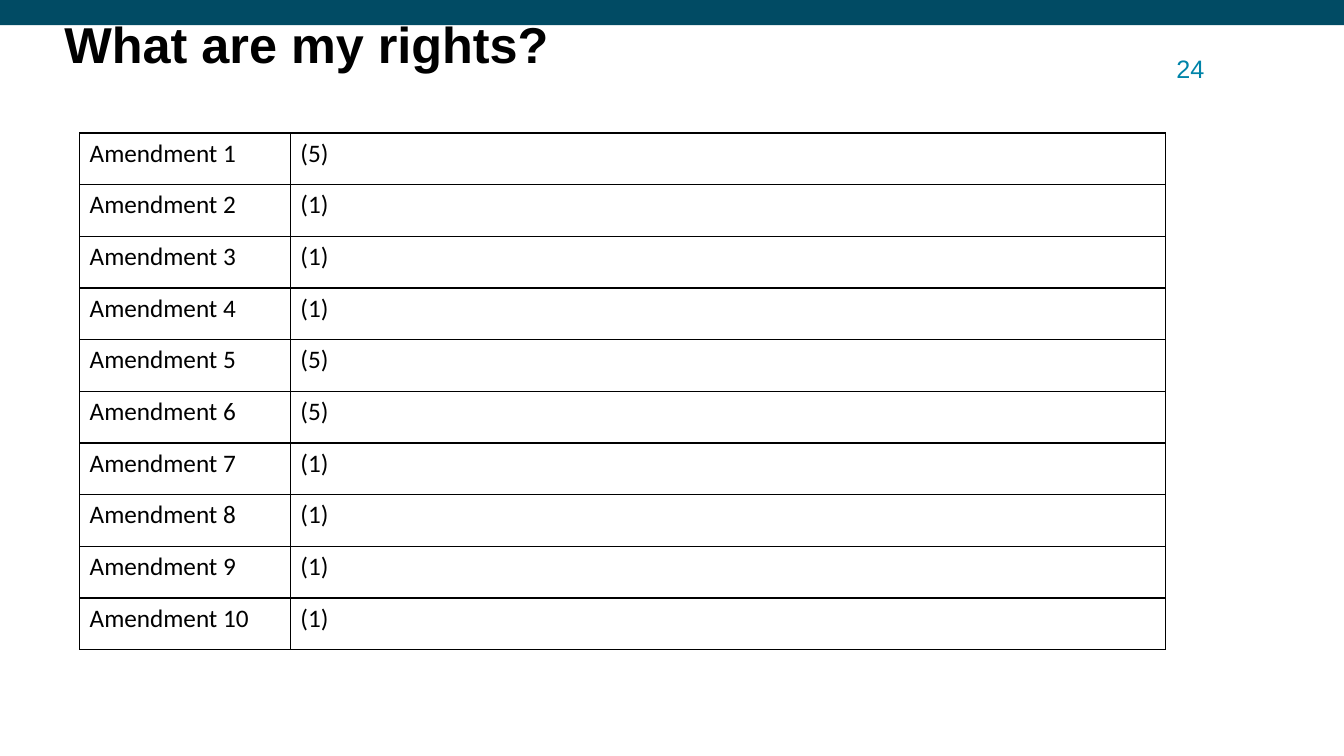
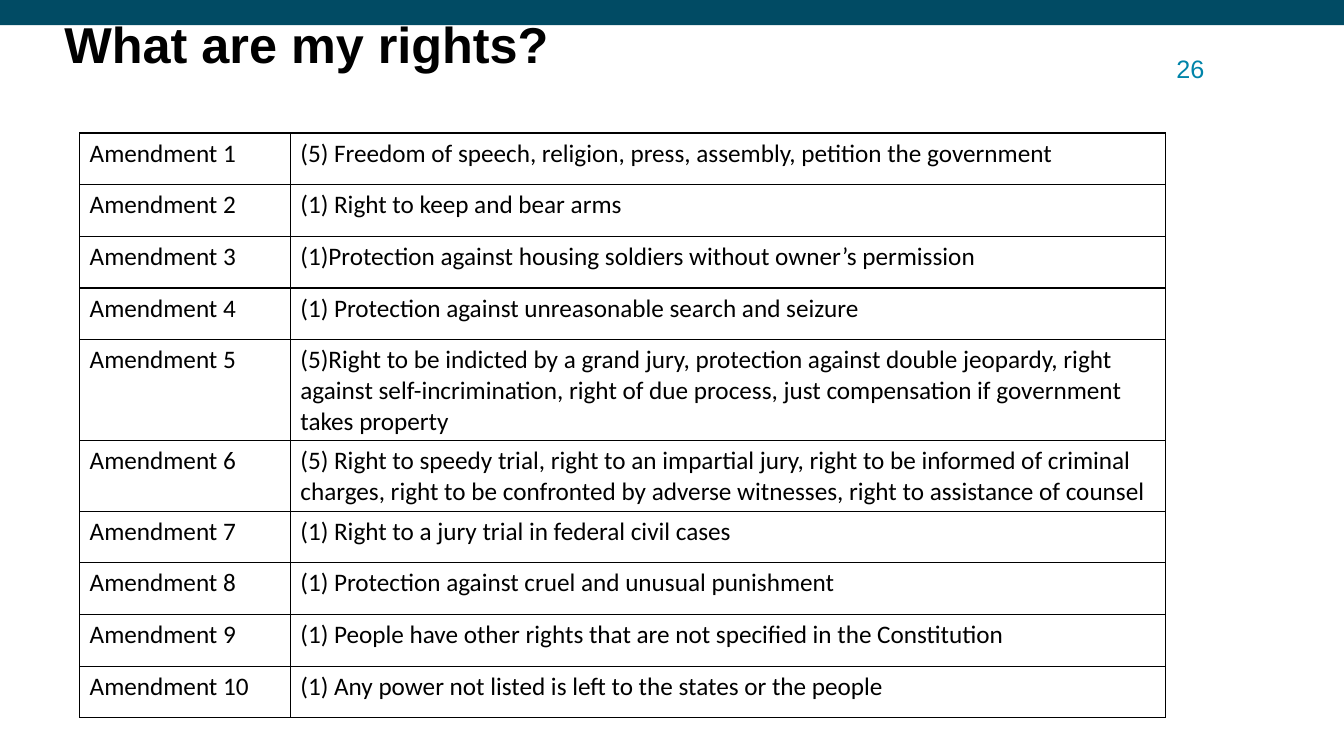
from dataclasses import dataclass

from lxml.etree import SubElement
from pptx import Presentation
from pptx.dml.color import RGBColor as Rgb
from pptx.enum.shapes import MSO_SHAPE as Shape
from pptx.enum.text import MSO_ANCHOR as Anchor, PP_ALIGN as Align
from pptx.oxml.ns import qn
from pptx.presentation import Presentation as Deck
from pptx.slide import Slide
from pptx.table import _Cell as Cell
from pptx.text.text import _Paragraph as Para
from pptx.util import Pt


@dataclass(frozen=True)
class Font:
    name: str
    size: int
    color: str
    bold: bool = False


@dataclass(frozen=True)
class Theme:
    band: str = "014B64"
    rule: str = "000000"
    line: int = 1
    title: Font = Font("Arial", 36, "000000", True)
    number: Font = Font("Arial", 18, "0084A9")
    body: Font = Font("Calibri", 18, "000000")


@dataclass(frozen=True)
class Box:
    left: float
    top: float
    width: float
    height: float

    def place(self) -> tuple[Pt, Pt, Pt, Pt]:
        return Pt(self.left), Pt(self.top), Pt(self.width), Pt(self.height)


@dataclass(frozen=True)
class Page:
    number: int
    rights: list[str]


THEME = Theme()
WIDTH, HEIGHT = 960, 540
BAND = Box(0, 0, WIDTH, 18)
TITLE = Box(46, 14.4, 741, 64.8)
NUMBER = Box(832.3, 34.6, 36, 25.2)
COLS = (150.5, 625)
ROW = 36.93
RIGHTS = [
    "(5) Freedom of speech, religion, press, assembly, petition the government",
    "(1) Right to keep and bear arms",
    "(1)Protection against housing soldiers without owner’s permission",
    "(1) Protection against unreasonable search and seizure",
    "(5)Right to be indicted by a grand jury, protection against double jeopardy, "
    "right against self-incrimination, right of due process, just compensation "
    "if government takes property",
    "(5) Right to speedy trial, right to an impartial jury, right to be informed "
    "of criminal charges, right to be confronted by adverse witnesses, right to "
    "assistance of counsel",
    "(1) Right to a jury trial in federal civil cases",
    "(1) Protection against cruel and unusual punishment",
    "(1) People have other rights that are not specified in the Constitution",
    "(1) Any power not listed is left to the states or the people",
]
COUNTS = [right[:3] for right in RIGHTS]
PAGES = [Page(24, COUNTS), Page(26, RIGHTS)]


def add_run(para: Para, text: str, style: Font) -> None:
    run = para.add_run()
    run.text = text
    font = run.font
    font.name, font.size, font.bold = style.name, Pt(style.size), style.bold
    font.color.rgb = Rgb.from_string(style.color)


def add_text(slide: Slide, box: Box, text: str, style: Font, anchor: Anchor) -> Para:
    frame = slide.shapes.add_textbox(*box.place()).text_frame
    frame.word_wrap = True
    frame.vertical_anchor = anchor
    frame.margin_left = frame.margin_right = Pt(0)
    frame.margin_top = frame.margin_bottom = Pt(0)
    para = frame.paragraphs[0]
    add_run(para, text, style)
    return para


def add_frame(slide: Slide, number: int) -> None:
    """Draw the band, title and page number that every slide shares."""
    band = slide.shapes.add_shape(Shape.RECTANGLE, *BAND.place())
    band.shadow.inherit = False
    band.fill.solid()
    band.fill.fore_color.rgb = Rgb.from_string(THEME.band)
    band.line.fill.background()
    title = add_text(slide, TITLE, "What are my rights?", THEME.title, Anchor.TOP)
    title.line_spacing = 0.9
    count = add_text(slide, NUMBER, str(number), THEME.number, Anchor.BOTTOM)
    count.alignment = Align.CENTER


def fill_cell(cell: Cell, text: str) -> None:
    props = cell._tc.get_or_add_tcPr()
    for side in ("a:lnL", "a:lnR", "a:lnT", "a:lnB"):
        line = SubElement(props, qn(side), w=str(Pt(THEME.line)))
        paint = SubElement(line, qn("a:solidFill"))
        SubElement(paint, qn("a:srgbClr"), val=THEME.rule)
    cell.fill.background()
    add_run(cell.text_frame.paragraphs[0], text, THEME.body)


def add_rights(slide: Slide, rights: list[str]) -> None:
    box = Box(56.9, 95, sum(COLS), ROW * len(rights))
    table = slide.shapes.add_table(len(rights), len(COLS), *box.place()).table
    table.first_row = table.horz_banding = False
    for col, width in zip(table.columns, COLS):
        col.width = Pt(width)
    for index, right in enumerate(rights):
        table.rows[index].height = Pt(ROW)
        fill_cell(table.cell(index, 0), f"Amendment {index + 1}")
        fill_cell(table.cell(index, 1), right)


def add_page(deck: Deck, page: Page) -> None:
    slide = deck.slides.add_slide(deck.slide_layouts[6])
    add_frame(slide, page.number)
    add_rights(slide, page.rights)


def main() -> None:
    deck = Presentation()
    deck.slide_width, deck.slide_height = Pt(WIDTH), Pt(HEIGHT)
    for page in PAGES:
        add_page(deck, page)
    deck.save("out.pptx")


if __name__ == "__main__":
    main()
